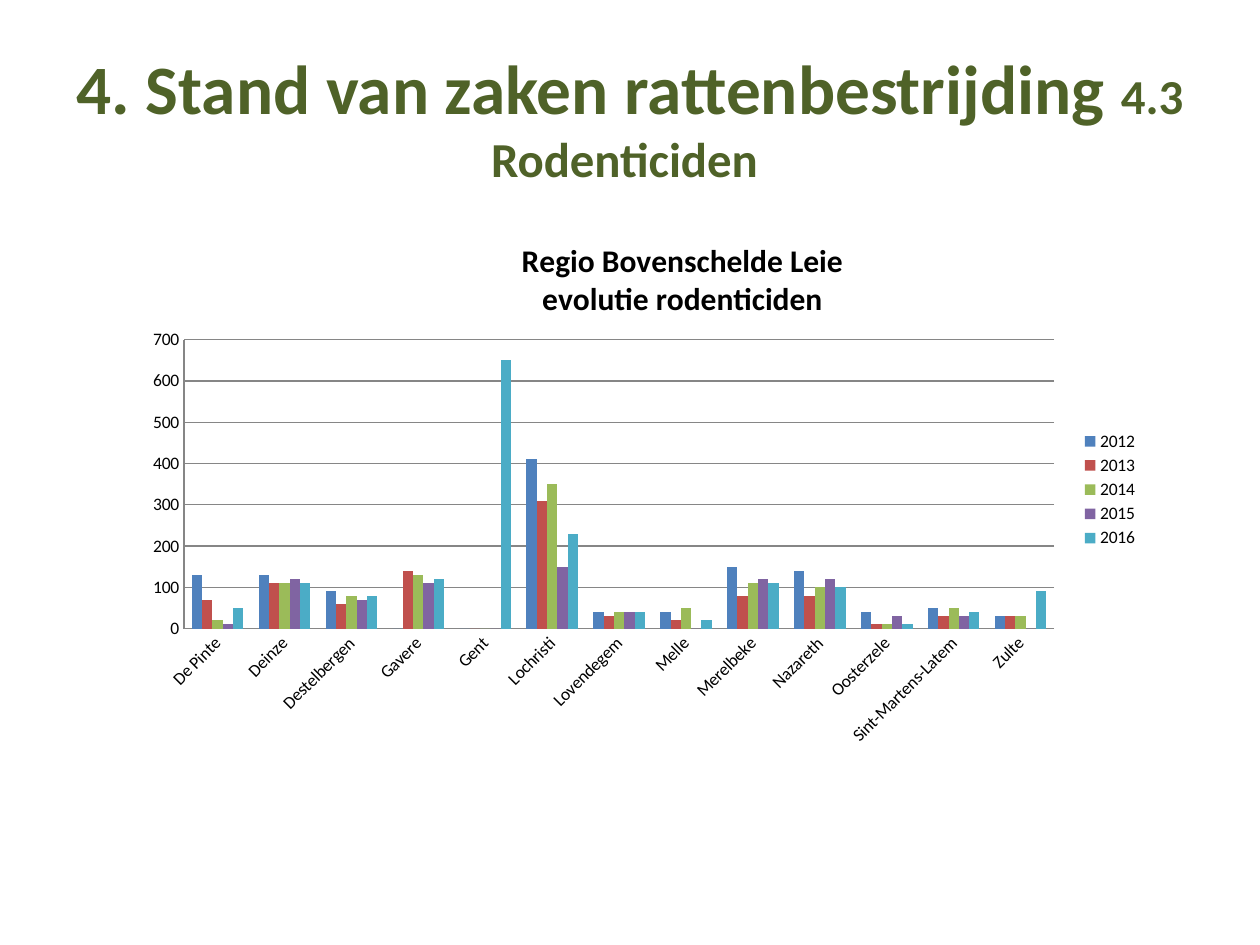
import pptx
import pptx.util
import pptx.dml.color
import pptx.chart.data
import pptx.enum.chart
import pptx.enum.text
import pptx.oxml
import pptx.oxml.ns
from dataclasses import dataclass

CELL = pptx.util.Inches(0.1)  # grid of 100 columns by 75 rows


@dataclass(frozen=True)
class Theme:
    font: str = "Calibri"
    head: str = "4F6228"
    text: str = "000000"
    line: str = "868686"
    bars: tuple = ("4F81BD", "C0504D", "9BBB59", "8064A2", "4BACC6")
    large: float = 39.6
    small: float = 27.9
    title: float = 18
    label: float = 10


THEME = Theme()
TOWNS = ["De Pinte", "Deinze", "Destelbergen", "Gavere", "Gent", "Lochristi",
         "Lovendegem", "Melle", "Merelbeke", "Nazareth", "Oosterzele",
         "Sint-Martens-Latem", "Zulte"]
YEARS = {
    "2012": [130, 130, 90, 0, 0, 410, 40, 40, 150, 140, 40, 50, 30],
    "2013": [70, 110, 60, 140, 0, 310, 30, 20, 80, 80, 10, 30, 30],
    "2014": [20, 110, 80, 130, 0, 350, 40, 50, 110, 100, 10, 50, 30],
    "2015": [10, 120, 70, 110, 0, 150, 40, 0, 120, 120, 30, 30, 0],
    "2016": [50, 110, 80, 120, 650, 230, 40, 20, 110, 100, 10, 40, 90],
}


def place(*cells):
    return [round(cell * CELL) for cell in cells]


def apply(item, **values):
    for name, value in values.items():
        setattr(item, name, value)


def style(font, size, color, bold=False):
    apply(font, name=THEME.font, size=pptx.util.Pt(size), bold=bold)
    font.color.rgb = pptx.dml.color.RGBColor.from_string(color)


def stroke(line):
    line.color.rgb = pptx.dml.color.RGBColor.from_string(THEME.line)
    line.width = pptx.util.Pt(0.75)


def pin(node, index, target=None, **shares):
    """Give a chart part a fixed spot, in shares of the chart's size."""
    for old in node.findall(pptx.oxml.ns.qn("c:layout")):
        node.remove(old)
    inner = f'<c:layoutTarget val="{target}"/>' if target else ""
    modes = "".join(f'<c:{key}Mode val="edge"/>' for key in "xy")
    sizes = "".join(f'<c:{key} val="{value}"/>' for key, value in shares.items())
    node.insert(index, pptx.oxml.parse_xml(
        f'<c:layout {pptx.oxml.ns.nsdecls("c")}><c:manualLayout>'
        f"{inner}{modes}{sizes}</c:manualLayout></c:layout>"))


def add_head(slide, parts):
    head = slide.shapes.title
    left, top, width, height = place(5, 3, 90, 12.5)
    apply(head, left=left, top=top, width=width, height=height)
    frame = head.text_frame
    apply(frame, word_wrap=True, margin_left=CELL // 2, margin_right=CELL // 2,
          vertical_anchor=pptx.enum.text.MSO_ANCHOR.MIDDLE)
    para = frame.paragraphs[0]
    para.alignment = pptx.enum.text.PP_ALIGN.CENTER
    for text, size in parts:
        run = para.add_run()
        run.text = text
        style(run.font, size, THEME.head, bold=True)


def name_chart(chart, lines):
    frame = chart.chart_title.text_frame
    for index, text in enumerate(lines):
        para = frame.add_paragraph() if index else frame.paragraphs[0]
        run = para.add_run()
        run.text = text
        style(run.font, THEME.title, THEME.text, bold=True)
    pin(chart.chart_title._element, 1, x=0.38, y=0.04)


def style_axes(chart):
    none = pptx.enum.chart.XL_TICK_MARK.NONE
    for axis in (chart.category_axis, chart.value_axis):
        apply(axis, major_tick_mark=none, minor_tick_mark=none)
        style(axis.tick_labels.font, THEME.label, THEME.text)
        stroke(axis.format.line)
    body = chart.category_axis._element.find(".//" + pptx.oxml.ns.qn("a:bodyPr"))
    body.set("rot", "-2700000")
    body.set("vert", "horz")
    axis = chart.value_axis
    apply(axis, minimum_scale=0, maximum_scale=700, major_unit=100,
          has_major_gridlines=True)
    apply(axis.tick_labels, number_format="0", number_format_is_linked=False)
    stroke(axis.major_gridlines.format.line)


def add_chart(slide):
    data = pptx.chart.data.CategoryChartData()
    data.categories = TOWNS
    for year, values in YEARS.items():
        data.add_series(year, values)
    kind = pptx.enum.chart.XL_CHART_TYPE.COLUMN_CLUSTERED
    chart = slide.shapes.add_chart(
        kind, *place(10.6, 17, 80.3, 43.3), data).chart
    style(chart.font, THEME.label, THEME.text)
    name_chart(chart, ["Regio Bovenschelde Leie", "evolutie rodenticiden"])
    style_axes(chart)

    plot = chart.plots[0]
    apply(plot, gap_width=150, overlap=0, vary_by_categories=False)
    for row, color in zip(plot.series, THEME.bars):
        row.invert_if_negative = False
        row.format.fill.solid()
        row.format.fill.fore_color.rgb = pptx.dml.color.RGBColor.from_string(color)
    area = chart._chartSpace.chart.plotArea
    pin(area, 0, "inner", x=0.05, y=0.23, w=0.86, h=0.53)

    chart.has_legend = True
    apply(chart.legend, include_in_layout=False,
          position=pptx.enum.chart.XL_LEGEND_POSITION.RIGHT)
    style(chart.legend.font, THEME.label, THEME.text)
    pin(chart.legend._element, 1, x=0.93, y=0.39, w=0.07, h=0.23)


def main():
    deck = pptx.Presentation()
    apply(deck, slide_width=100 * CELL, slide_height=75 * CELL)
    slide = deck.slides.add_slide(deck.slide_layouts[5])
    add_head(slide, [("4. Stand van zaken rattenbestrijding ", THEME.large),
                     ("4.3 Rodenticiden ", THEME.small)])
    add_chart(slide)
    deck.save("out.pptx")


if __name__ == "__main__":
    main()
